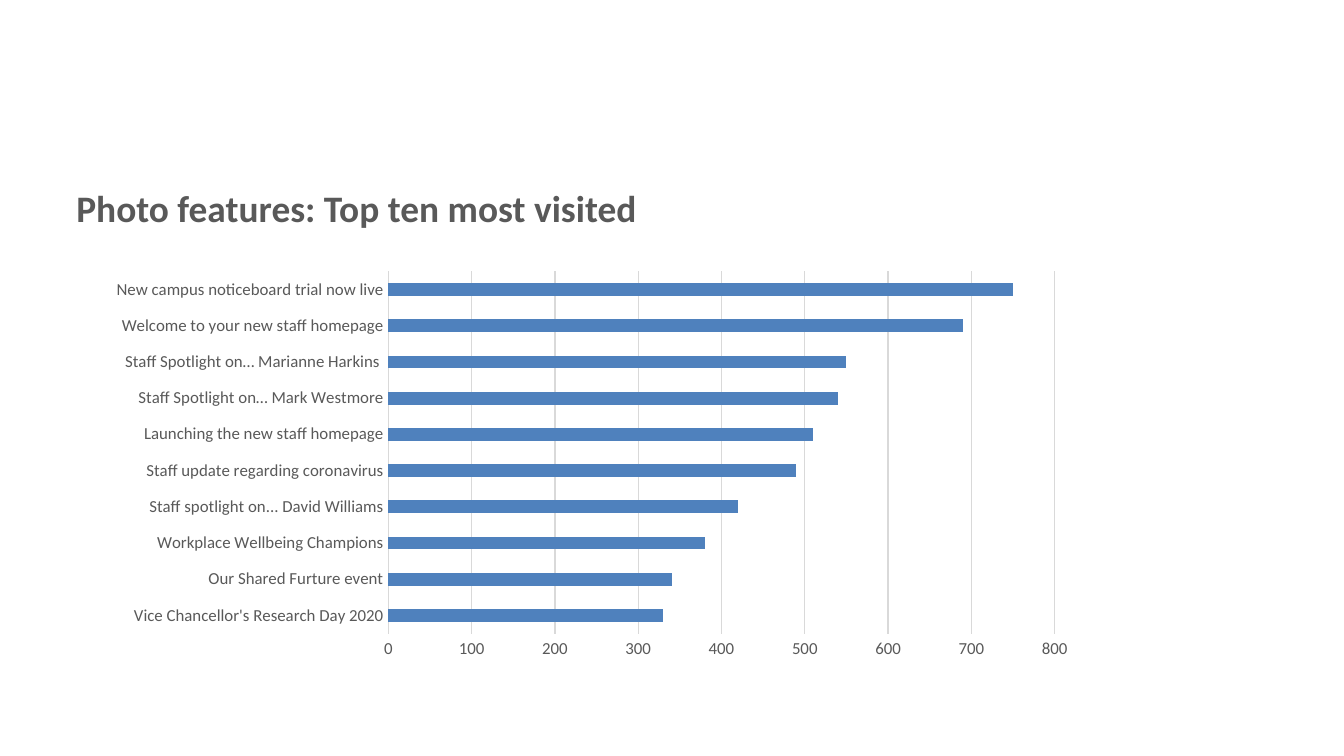
import dataclasses

import pptx
import pptx.chart.data
import pptx.dml.color
import pptx.enum.chart
import pptx.enum.text
import pptx.util
from pptx.util import Inches


@dataclasses.dataclass(frozen=True)
class Theme:
    """Colours, font and type sizes of the slide."""
    font: str = "Calibri"
    text: str = "595959"
    grid: str = "D9D9D9"
    bar: str = "4F81BD"
    title_size: int = 20
    axis_size: int = 9


class SlideBuilder:
    """Adds styled elements to the current slide."""

    def __init__(self, slide, theme):
        self.slide = slide
        self.theme = theme

    def style_font(self, font, size, bold=False):
        """Apply the theme's font and text colour."""
        font.name = self.theme.font
        font.size = pptx.util.Pt(size)
        font.bold = bold
        font.color.rgb = pptx.dml.color.RGBColor.from_string(self.theme.text)

    def style_line(self, line):
        """Apply the thin grid line style."""
        line.color.rgb = pptx.dml.color.RGBColor.from_string(self.theme.grid)
        line.width = pptx.util.Pt(0.75)

    def add_title(self, text, left, top, width, height):
        """Add the bold slide title."""
        shape = self.slide.shapes.add_textbox(left, top, width, height)
        text_frame = shape.text_frame
        text_frame.word_wrap = True
        text_frame.vertical_anchor = pptx.enum.text.MSO_ANCHOR.TOP
        text_frame.text = text
        self.style_font(text_frame.paragraphs[0].runs[0].font, self.theme.title_size, bold=True)

    def add_bar_chart(self, visits, left, top, width, height):
        """Add a horizontal bar chart of visits by feature."""
        chart_data = pptx.chart.data.CategoryChartData()
        chart_data.categories = list(visits)
        chart_data.add_series("Series 1", list(visits.values()))
        chart = self.slide.shapes.add_chart(
            pptx.enum.chart.XL_CHART_TYPE.BAR_CLUSTERED, left, top, width, height, chart_data
        ).chart
        chart.has_legend = False
        chart.has_title = False
        self.style_font(chart.font, self.theme.axis_size)

        plot = chart.plots[0]
        plot.gap_width = 182
        plot.vary_by_categories = False
        fill = plot.series[0].format.fill
        fill.solid()
        fill.fore_color.rgb = pptx.dml.color.RGBColor.from_string(self.theme.bar)

        for axis in (chart.category_axis, chart.value_axis):
            axis.major_tick_mark = pptx.enum.chart.XL_TICK_MARK.NONE
            axis.minor_tick_mark = pptx.enum.chart.XL_TICK_MARK.NONE
            self.style_font(axis.tick_labels.font, self.theme.axis_size)
        chart.category_axis.has_major_gridlines = False
        self.style_line(chart.category_axis.format.line)

        value_axis = chart.value_axis
        value_axis.minimum_scale = 0
        value_axis.maximum_scale = 800
        value_axis.major_unit = 100
        value_axis.has_major_gridlines = True
        value_axis.format.line.fill.background()
        self.style_line(value_axis.major_gridlines.format.line)


VISITS = {
    "Vice Chancellor's Research Day 2020": 330,
    "Our Shared Furture event": 340,
    "Workplace Wellbeing Champions": 380,
    "Staff spotlight on... David Williams": 420,
    "Staff update regarding coronavirus": 490,
    "Launching the new staff homepage": 510,
    "Staff Spotlight on… Mark Westmore": 540,
    "Staff Spotlight on… Marianne Harkins ": 550,
    "Welcome to your new staff homepage": 690,
    "New campus noticeboard trial now live": 750,
}


def main():
    """Build and save the slide."""
    presentation = pptx.Presentation()
    presentation.slide_width = Inches(10)
    presentation.slide_height = Inches(10) * 9 // 16
    slide = presentation.slides.add_slide(presentation.slide_layouts[6])
    builder = SlideBuilder(slide, Theme())
    builder.add_title(
        "Photo features: Top ten most visited", Inches(0.47), Inches(1.33), Inches(6.6), Inches(0.67)
    )
    builder.add_bar_chart(VISITS, Inches(0.72), Inches(1.96), Inches(7.37), Inches(3))
    presentation.save("out.pptx")


if __name__ == "__main__":
    main()
